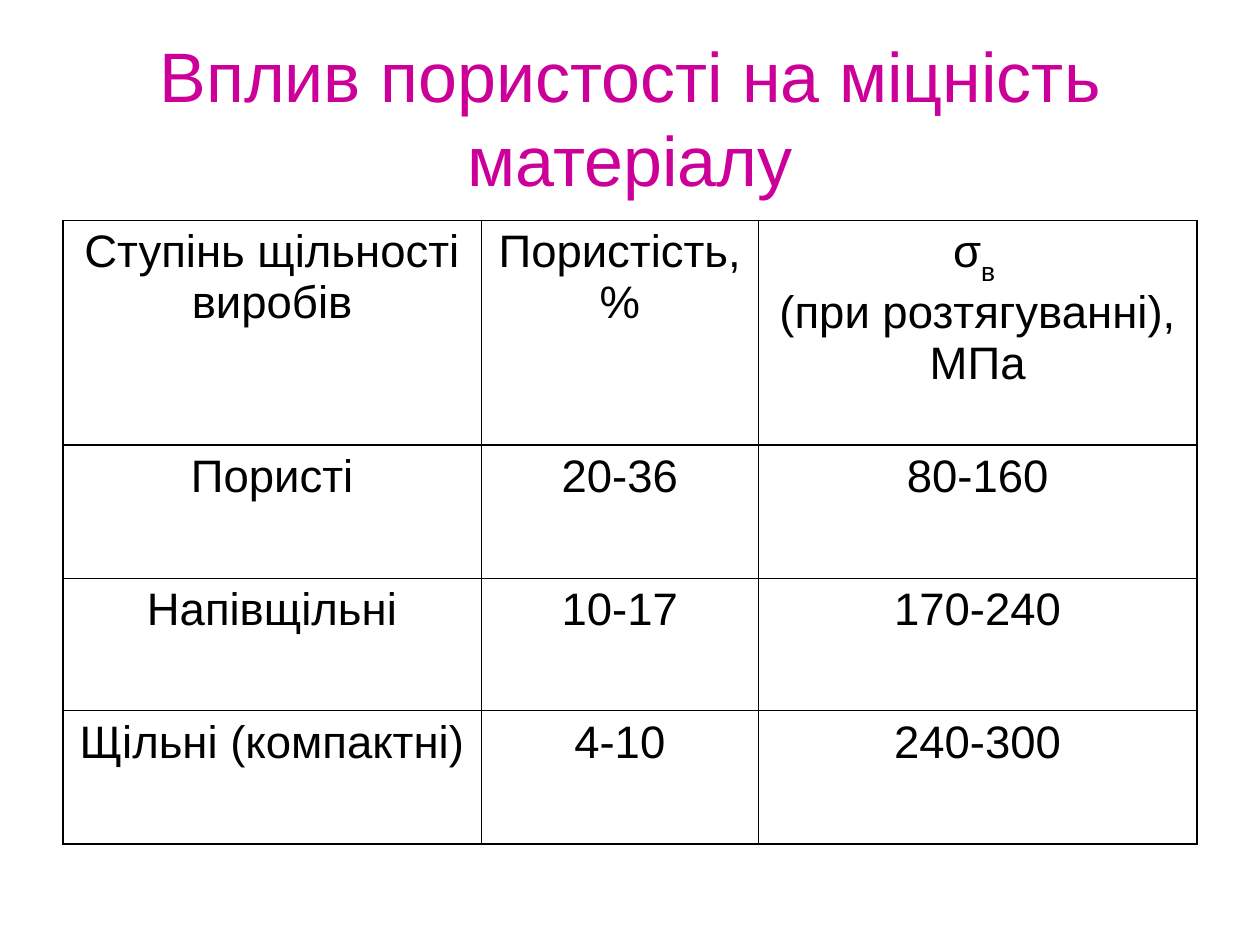
from lxml.etree import SubElement
from pptx import Presentation
from pptx.dml.color import RGBColor
from pptx.enum.text import MSO_ANCHOR, PP_ALIGN
from pptx.oxml.ns import qn
from pptx.util import Inches, Pt

BLACK = RGBColor(0x00, 0x00, 0x00)
MAGENTA = RGBColor(0xCC, 0x00, 0x99)
FONT = "Arial"

COLUMN_WIDTHS = [3.32, 2.2, 3.48]
ROW_HEIGHTS = [1.78, 1.06, 1.05, 1.06]
# A cell is a list of paragraphs; a paragraph is a list of (text, baseline) spans.
STRENGTH_HEADING = [
    [("σ", 0), ("в ", -30)],
    [("(при розтягуванні), МПа", 0)],
]
ROWS = [
    ["Ступінь щільності виробів", "Пористість, %", STRENGTH_HEADING],
    ["Пористі", "20-36", "80-160"],
    ["Напівщільні", "10-17", "170-240"],
    ["Щільні (компактні)", "4-10", "240-300"],
]


def add_span(para, text, size, color=BLACK, baseline=0):
    """Add formatted text; baseline is a percentage, negative for subscript."""
    para.alignment = PP_ALIGN.CENTER
    span = para.add_run()
    span.text = text
    span.font.name = FONT
    span.font.size = Pt(size)
    span.font.color.rgb = color
    if baseline:
        span.font._element.set("baseline", str(baseline * 1000))


def add_title(slide, text):
    title = slide.shapes.title
    title.left, title.top = Inches(0.5), Inches(0.3)
    title.width, title.height = Inches(9), Inches(1.25)
    frame = title.text_frame
    frame.word_wrap = True
    frame.vertical_anchor = MSO_ANCHOR.MIDDLE
    add_span(frame.paragraphs[0], text, size=40, color=MAGENTA)


def set_borders(cell, color=BLACK, width=1):
    properties = cell._tc.get_or_add_tcPr()
    for position, side in enumerate(("lnL", "lnR", "lnT", "lnB")):
        line = SubElement(properties, qn(f"a:{side}"), w=str(Pt(width)))
        fill = SubElement(line, qn("a:solidFill"))
        SubElement(fill, qn("a:srgbClr"), val=str(color))
        properties.insert(position, line)


def fill_cell(cell, content):
    paragraphs = [[(content, 0)]] if isinstance(content, str) else content
    frame = cell.text_frame
    for index, spans in enumerate(paragraphs):
        para = frame.add_paragraph() if index else frame.paragraphs[0]
        for text, baseline in spans:
            add_span(para, text, size=26, baseline=baseline)
    cell.vertical_anchor = MSO_ANCHOR.TOP
    cell.fill.background()
    set_borders(cell)


def add_porosity_table(slide):
    table = slide.shapes.add_table(
        len(ROWS), len(COLUMN_WIDTHS), Inches(0.5), Inches(1.75),
        Inches(sum(COLUMN_WIDTHS)), Inches(sum(ROW_HEIGHTS)),
    ).table
    table.first_row = False
    table.horz_banding = False
    for column, width in zip(table.columns, COLUMN_WIDTHS):
        column.width = Inches(width)
    for row, height, contents in zip(table.rows, ROW_HEIGHTS, ROWS):
        row.height = Inches(height)
        for cell, content in zip(row.cells, contents):
            fill_cell(cell, content)


def main():
    deck = Presentation()
    deck.slide_width, deck.slide_height = Inches(10), Inches(7.5)
    slide = deck.slides.add_slide(deck.slide_layouts[5])
    add_title(slide, "Вплив пористості на міцність матеріалу")
    add_porosity_table(slide)
    deck.save("out.pptx")


if __name__ == "__main__":
    main()
